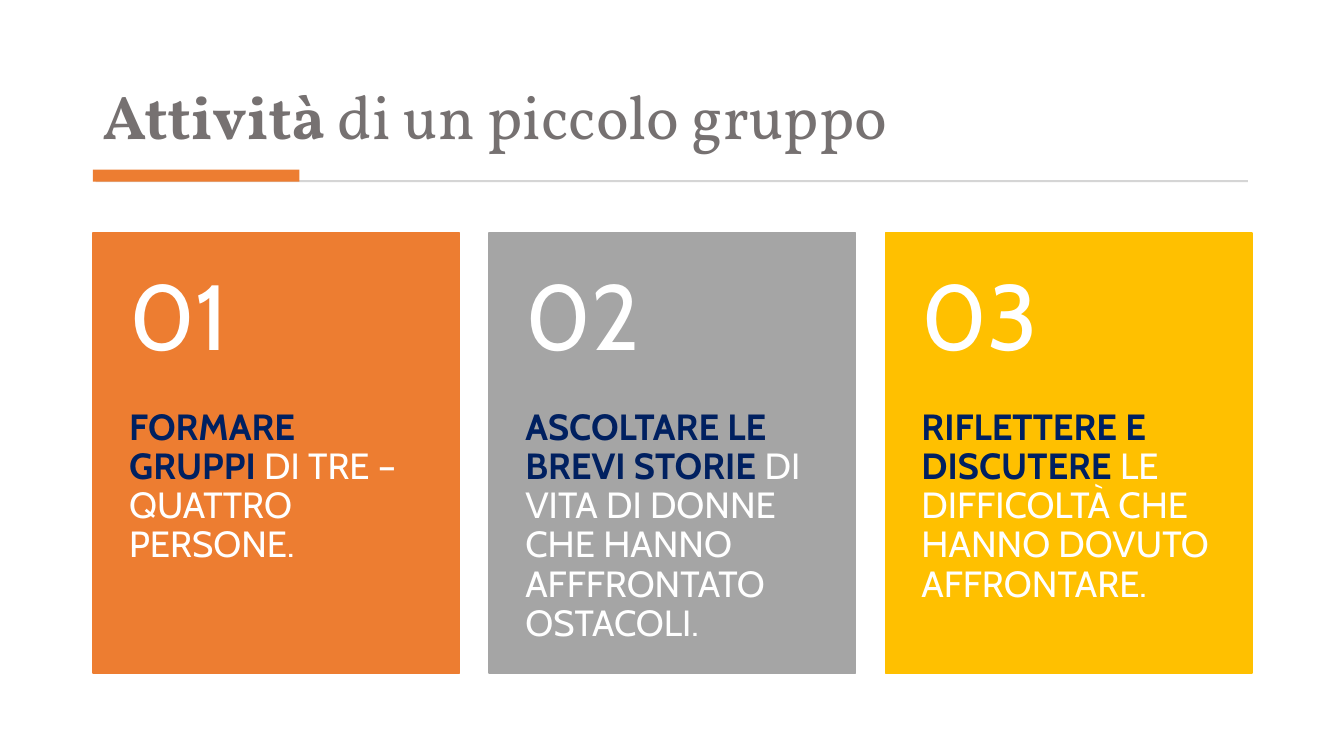
"""Build the slide on a small group activity, with three numbered cards."""
from dataclasses import dataclass

from pptx import Presentation
from pptx import util as u
from pptx.dml.color import RGBColor
from pptx.enum import shapes, text
from pptx.slide import Slide


@dataclass(frozen=True)
class Theme:
    orange: str = "ED7D31"
    grey: str = "A5A5A5"
    gold: str = "FFC000"
    navy: str = "002060"
    white: str = "FFFFFF"
    ink: str = "767171"
    rule: str = "D5D5D5"
    serif: str = "Vollkorn"
    sans: str = "Cabin"
    title: float = 44
    number: float = 66
    body: float = 26


@dataclass(frozen=True)
class Box:
    left: float
    top: float
    width: float
    height: float

    def place(self) -> tuple[u.Length, ...]:
        return tuple(u.Pt(v) for v in (self.left, self.top, self.width, self.height))


@dataclass(frozen=True)
class Span:
    words: str
    color: str
    bold: bool = False


@dataclass(frozen=True)
class Card:
    fill: str
    lead: str
    rest: str


THEME = Theme()
LEFT = 66.3
TOP = 166.3
WIDTH = 262
PITCH = 283
HEAD = 125.6
BODY = 188.9
PAD = 25.9

CARDS = [
    Card(THEME.orange, "FORMARE GRUPPI ", "DI TRE – QUATTRO PERSONE."),
    Card(THEME.grey, "ASCOLTARE LE BREVI STORIE ",
         "DI VITA DI DONNE CHE HANNO AFFFRONTATO OSTACOLI."),
    Card(THEME.gold, "RIFLETTERE E DISCUTERE ",
         "LE DIFFICOLTÀ CHE HANNO DOVUTO AFFRONTARE."),
]


def add_block(slide: Slide, box: Box, fill: str, edge: bool = False) -> None:
    block = slide.shapes.add_shape(shapes.MSO_SHAPE.RECTANGLE, *box.place())
    block.shadow.inherit = False
    block.fill.solid()
    block.fill.fore_color.rgb = RGBColor.from_string(fill)
    if edge:
        block.line.color.rgb = RGBColor.from_string(fill)
        block.line.width = u.Pt(1)
    else:
        block.line.fill.background()


def add_text(slide: Slide, box: Box, spans: list[Span], font: str, size: float,
             anchor: text.MSO_ANCHOR, pads: tuple[float, float, float, float]) -> None:
    frame = slide.shapes.add_textbox(*box.place()).text_frame
    frame.word_wrap = True
    frame.vertical_anchor = anchor
    (frame.margin_left, frame.margin_top,
     frame.margin_right, frame.margin_bottom) = (u.Pt(pad) for pad in pads)
    para = frame.paragraphs[0]
    para.line_spacing = 0.9
    for span in spans:
        run = para.add_run()
        run.text = span.words
        run.font.name = font
        run.font.size = u.Pt(size)
        run.font.bold = span.bold
        run.font.color.rgb = RGBColor.from_string(span.color)


def add_card(slide: Slide, index: int, card: Card) -> None:
    left = LEFT + index * PITCH
    add_block(slide, Box(left, TOP, WIDTH, HEAD + BODY), card.fill, edge=True)
    add_text(slide, Box(left, TOP + HEAD, WIDTH, BODY),
             [Span(card.lead, THEME.navy, True), Span(card.rest, THEME.white)],
             THEME.sans, THEME.body, text.MSO_ANCHOR.TOP, (PAD, 0, PAD, PAD))
    add_text(slide, Box(left, TOP, WIDTH, HEAD),
             [Span(f"{index + 1:02}", THEME.white)],
             THEME.sans, THEME.number, text.MSO_ANCHOR.MIDDLE, (PAD, 13, PAD, 13))


def main() -> None:
    deck = Presentation()
    deck.slide_width, deck.slide_height = u.Pt(960), u.Pt(540)
    slide = deck.slides.add_slide(deck.slide_layouts[6])
    add_text(slide, Box(LEFT, 32.4, 827.3, 80),
             [Span("Attività ", THEME.ink, True), Span("di un piccolo gruppo", THEME.ink)],
             THEME.serif, THEME.title, text.MSO_ANCHOR.BOTTOM, (7.2, 3.6, 7.2, 3.6))
    add_block(slide, Box(68.4, 128.7, 823, 1.4), THEME.rule)
    add_block(slide, Box(LEFT, 121.2, 147.6, 8.6), THEME.orange)
    for index, card in enumerate(CARDS):
        add_card(slide, index, card)
    deck.save("out.pptx")


if __name__ == "__main__":
    main()
